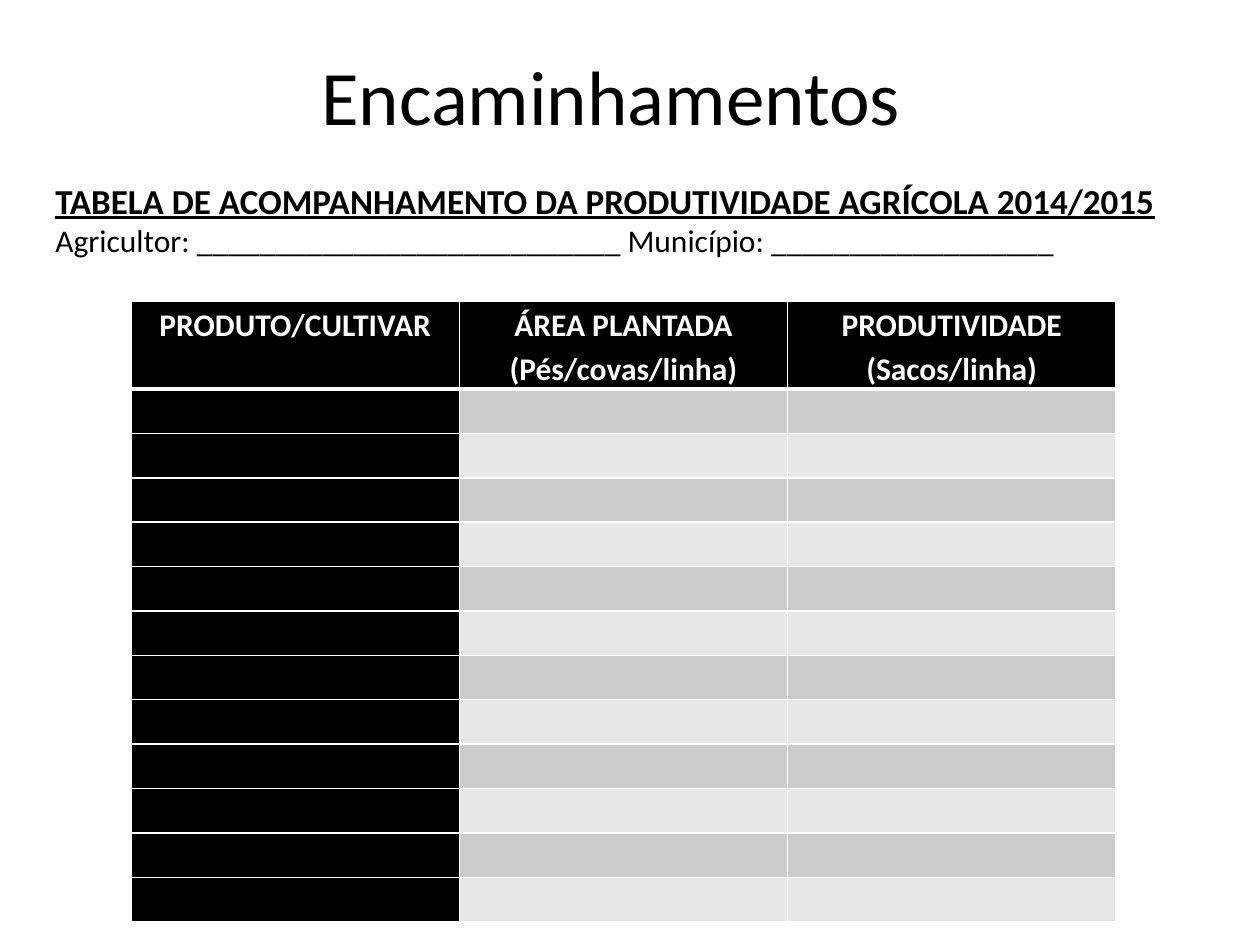
from dataclasses import dataclass
from lxml.etree import SubElement
from pptx import Presentation
from pptx.dml.color import RGBColor
from pptx.enum.text import MSO_ANCHOR, PP_ALIGN
from pptx.oxml.ns import qn
from pptx.util import Emu, Pt


@dataclass(frozen=True)
class Theme:
    font: str = "Calibri"
    ink: str = "000000"
    paper: str = "FFFFFF"
    bands: tuple = ("CCCCCC", "E7E7E7")
    title: int = 44
    head: int = 20
    body: int = 18


THEME = Theme()
SCALE = 914400 / 126
HEADS = ["PRODUTO/CULTIVAR", "ÁREA PLANTADA (Pés/covas/linha)", "PRODUTIVIDADE (Sacos/linha)"]
ROWS = 12


def px(n):
    return Emu(round(n * SCALE))


def apply(item, props):
    for name, value in props.items():
        setattr(item, name, value)


def paint(fill, color):
    fill.solid()
    fill.fore_color.rgb = RGBColor.from_string(color)


def write(para, text, size, color=THEME.ink, **props):
    run = para.add_run()
    run.text = text
    apply(run.font, {"name": THEME.font, "size": Pt(size), **props})
    run.font.color.rgb = RGBColor.from_string(color)


def frame(slide, box, anchor):
    shape = slide.shapes.add_textbox(*map(px, box))
    apply(shape.text_frame, {"word_wrap": True, "vertical_anchor": anchor})
    return shape


def title(slide, box):
    shape = frame(slide, box, MSO_ANCHOR.MIDDLE)
    paint(shape.fill, THEME.paper)
    color = shape.fill._xPr.find(qn("a:solidFill"))[0]
    SubElement(color, qn("a:alpha"), val="57000")
    para = shape.text_frame.paragraphs[0]
    para.alignment = PP_ALIGN.CENTER
    write(para, "Encaminhamentos", THEME.title)


def form(slide, box):
    text = frame(slide, box, MSO_ANCHOR.TOP).text_frame
    write(text.paragraphs[0], "TABELA DE ACOMPANHAMENTO DA PRODUTIVIDADE AGRÍCOLA 2014/2015",
          THEME.head, bold=True, underline=True)
    write(text.add_paragraph(),
          "Agricultor: ___________________________ Município: __________________", THEME.body)


def edge(cell, side, width):
    line = SubElement(cell._tc.get_or_add_tcPr(), qn("a:ln" + side), w=str(Pt(width)))
    fill = SubElement(line, qn("a:solidFill"))
    SubElement(fill, qn("a:srgbClr"), val=THEME.paper)


def style(cell, row, col):
    apply(cell, {"margin_left": px(9), "margin_right": px(9),
                 "margin_top": 0, "margin_bottom": 0})
    for side in "LRTB":
        thick = (row, side) in ((0, "B"), (1, "T"))
        edge(cell, side, 3 if thick else 1)
    dark = row == 0 or col == 0
    paint(cell.fill, THEME.ink if dark else THEME.bands[(row - 1) % 2])


def grid(slide, box, head):
    left, top, width, height = box
    table = slide.shapes.add_table(ROWS + 1, len(HEADS), *map(px, box)).table
    for col in table.columns:
        col.width = px(width / len(HEADS))
    for i, row in enumerate(table.rows):
        row.height = px((height - head) / ROWS if i else head)
        for j, cell in enumerate(row.cells):
            style(cell, i, j)
    for cell, text in zip(table.rows[0].cells, HEADS):
        para = cell.text_frame.paragraphs[0]
        apply(para, {"alignment": PP_ALIGN.CENTER, "line_spacing": 1.15})
        write(para, text, THEME.body, THEME.paper, bold=True)


def main():
    deck = Presentation()
    apply(deck, {"slide_width": px(1260), "slide_height": px(945)})
    slide = deck.slides.add_slide(deck.slide_layouts[6])
    title(slide, (44, 16, 1134, 158))
    grid(slide, (131, 301, 985, 621), 88)
    form(slide, (43, 173, 1134, 127))
    deck.save("out.pptx")


if __name__ == "__main__":
    main()
